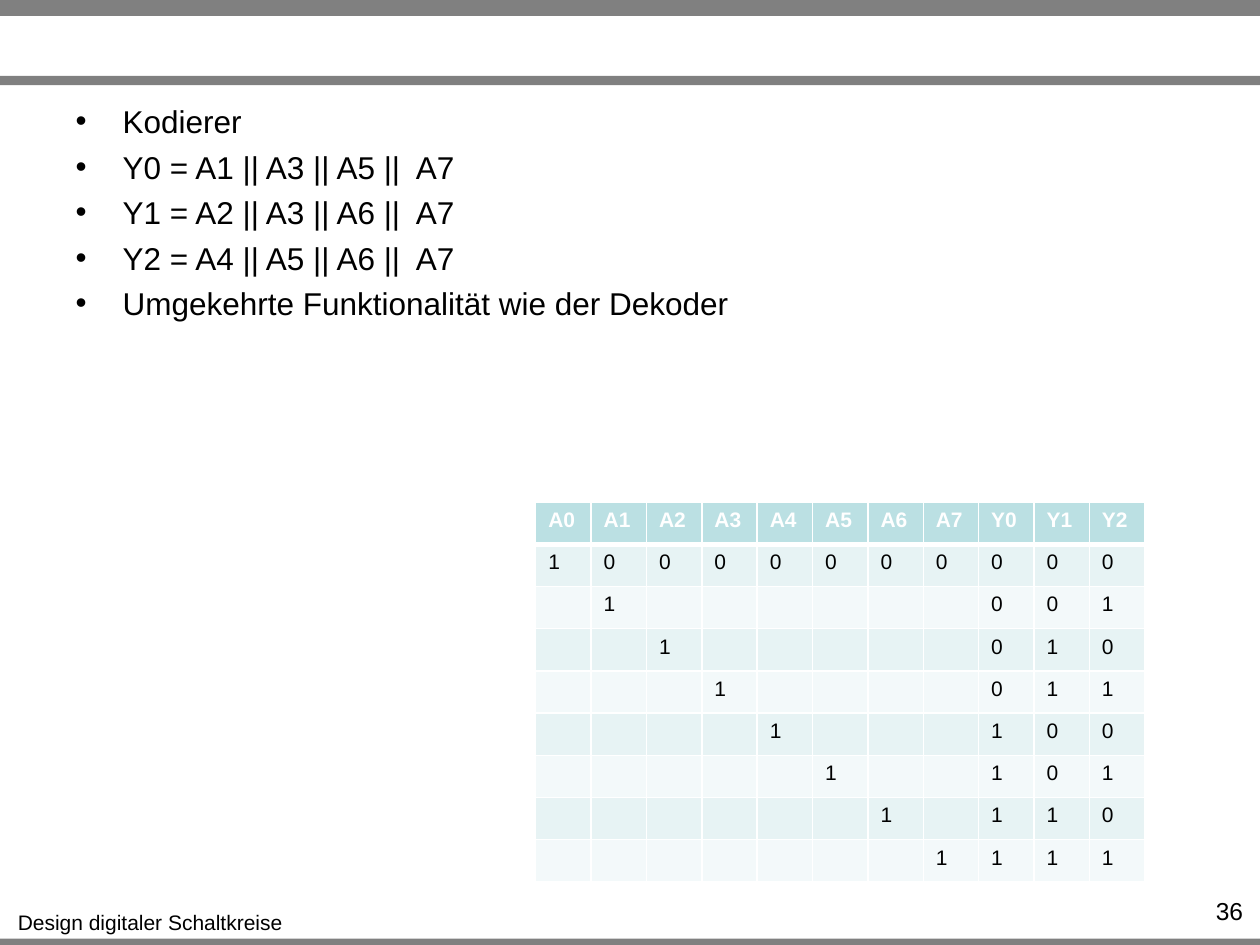
from lxml import etree
from pptx import Presentation
from pptx.dml.color import RGBColor
from pptx.enum.shapes import MSO_SHAPE
from pptx.enum.text import MSO_ANCHOR, MSO_AUTO_SIZE, PP_ALIGN
from pptx.oxml.ns import qn
from pptx.util import Cm, Pt

RECT = MSO_SHAPE.RECTANGLE
TOP = MSO_ANCHOR.TOP
LEFT, CENTER, RIGHT = PP_ALIGN.LEFT, PP_ALIGN.CENTER, PP_ALIGN.RIGHT
NO_FIT, GROW = MSO_AUTO_SIZE.NONE, MSO_AUTO_SIZE.SHAPE_TO_FIT_TEXT

WIDTH, HEIGHT = 25.4, 19.05
FONT = "Arial"
GRAY, BLACK, WHITE = "808080", "000000", "FFFFFF"
HEADER, BAND_DARK, BAND_LIGHT = "BBE0E3", "E7F3F4", "F3F9FA"

BULLETS = [
    "Kodierer",
    "Y0 = A1 || A3 || A5 ||  A7",
    "Y1 = A2 || A3 || A6 ||  A7",
    "Y2 = A4 || A5 || A6 ||  A7",
    "Umgekehrte Funktionalität wie der Dekoder",
]


def color(value):
    return RGBColor.from_string(value)


def write(p, text, size=12, fill=BLACK, bold=False, align=LEFT):
    p.alignment = align
    r = p.add_run()
    r.text = text
    r.font.name, r.font.size, r.font.bold = FONT, Pt(size), bold
    r.font.color.rgb = color(fill)


def add_bar(slide, top, height):
    sp = slide.shapes.add_shape(RECT, 0, Cm(top), Cm(WIDTH), Cm(height))
    sp.shadow.inherit = False
    sp.fill.solid()
    sp.fill.fore_color.rgb = color(GRAY)
    sp.line.fill.background()


def add_label(slide, box, text, wrap, fit, **fmt):
    tf = slide.shapes.add_textbox(*map(Cm, box)).text_frame
    tf.word_wrap, tf.auto_size = wrap, fit
    write(tf.paragraphs[0], text, **fmt)


def add_bullets(slide, box, lines):
    body = slide.placeholders[1]
    body.left, body.top, body.width, body.height = map(Cm, box)
    tf = body.text_frame
    tf.auto_size, tf.vertical_anchor = NO_FIT, TOP
    for i, line in enumerate(lines):
        p = tf.add_paragraph() if i else tf.paragraphs[0]
        pPr = p._p.get_or_add_pPr()
        pPr.set("marL", str(Cm(0.95)))
        pPr.set("indent", str(-Cm(0.95)))
        etree.SubElement(pPr, qn("a:buFont"), typeface=FONT)
        etree.SubElement(pPr, qn("a:buChar"), char="•")
        p.space_before = Pt(4.4 if i else 0)
        write(p, line, size=18)


def set_borders(cell, widths):
    tcPr = cell._tc.get_or_add_tcPr()
    for i, (side, width) in enumerate(widths.items()):
        ln = etree.Element(qn(f"a:ln{side}"), w=str(Pt(width)))
        fill = etree.SubElement(ln, qn("a:solidFill"))
        etree.SubElement(fill, qn("a:srgbClr"), val=WHITE)
        tcPr.insert(i, ln)


def encoder_rows():
    """Header, then one row per active input with its binary code."""
    rows = [[f"A{i}" for i in range(8)] + ["Y0", "Y1", "Y2"]]
    for active in range(8):
        rest = "" if active else "0"
        inputs = ["1" if i == active else rest for i in range(8)]
        rows.append(inputs + list(f"{active:03b}"))
    return rows


def add_truth_table(slide, box, rows):
    left, top, width, height = map(Cm, box)
    n_rows, n_cols = len(rows), len(rows[0])
    frame = slide.shapes.add_table(n_rows, n_cols, left, top, width, height)
    table = frame.table
    for col in table.columns:
        col.width = width // n_cols
    for i, values in enumerate(rows):
        table.rows[i].height = height // n_rows
        head = i == 0
        fill = HEADER if head else (BAND_DARK if i % 2 else BAND_LIGHT)
        for j, value in enumerate(values):
            cell = table.cell(i, j)
            cell.fill.solid()
            cell.fill.fore_color.rgb = color(fill)
            # The header's bottom line is shared with the first data row
            borders = {"L": 1, "R": 1}
            if head:
                borders["T"] = 1
            borders["B"] = 3 if head else 1
            set_borders(cell, borders)
            p = cell.text_frame.paragraphs[0]
            if value:
                write(p, value, fill=WHITE if head else BLACK, bold=head)
            else:
                # Keeps empty cells from growing the row
                etree.SubElement(p._p, qn("a:endParaRPr"), sz="1200")


def main():
    prs = Presentation()
    prs.slide_width, prs.slide_height = Cm(WIDTH), Cm(HEIGHT)
    slide = prs.slides.add_slide(prs.slide_layouts[1])
    title = slide.shapes.title._element
    title.getparent().remove(title)

    # Frame bars: bottom, top, below the title area
    for top, height in ((18.92, 0.2), (0, 0.32), (1.53, 0.19)):
        add_bar(slide, top, height)

    # Footer and slide number
    add_label(slide, (0.08, 18.22, 5.9, 0.76), "Design digitaler Schaltkreise",
              False, GROW, align=CENTER)
    add_label(slide, (23.11, 17.93, 2.2, 0.61), "36",
              True, NO_FIT, size=14, align=RIGHT)

    # Content
    add_bullets(slide, (1.27, 1.93, 22.86, 5.05), BULLETS)
    add_truth_table(slide, (10.8, 10.12, 12.28, 7.66), encoder_rows())

    prs.save("out.pptx")


if __name__ == "__main__":
    main()
